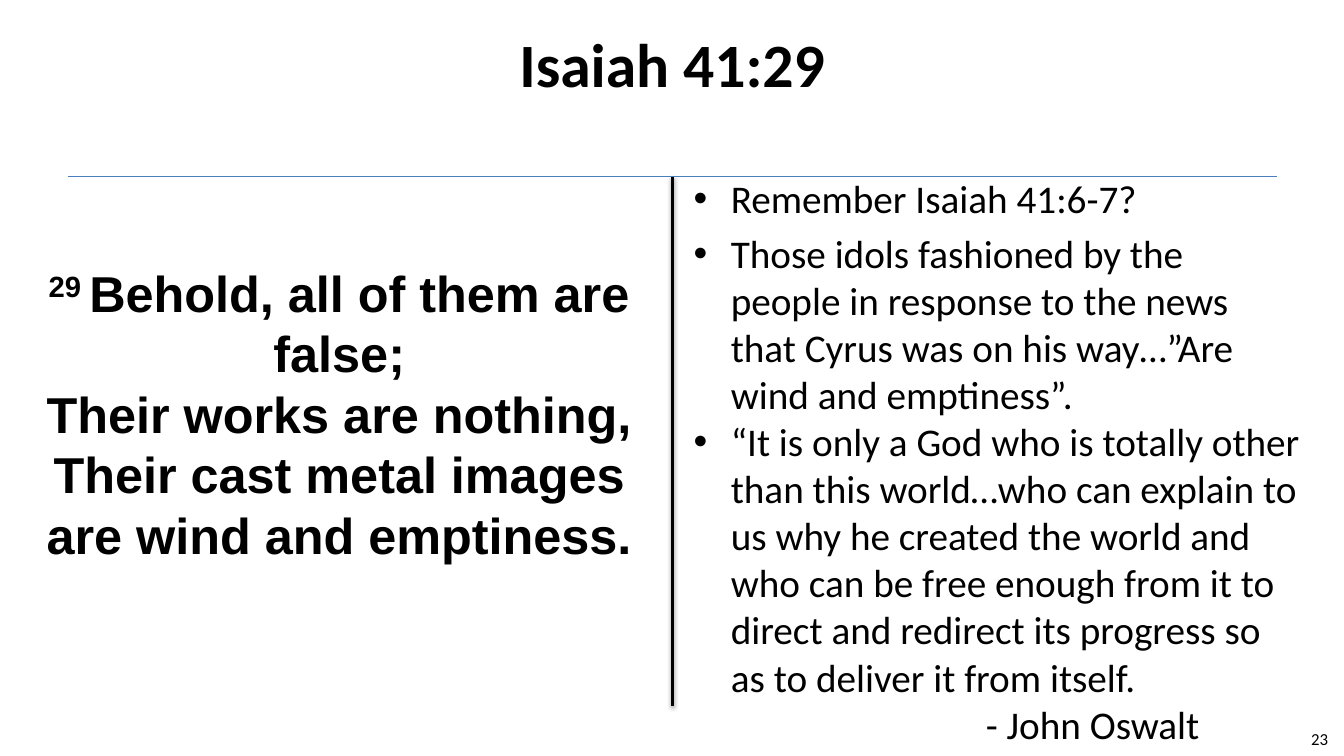
from lxml.etree import SubElement as Sub
from pptx import Presentation as Deck
from pptx.dml.color import RGBColor as Color
from pptx.enum.shapes import MSO_CONNECTOR as Link
from pptx.enum.text import MSO_ANCHOR as Anchor, PP_ALIGN as Align
from pptx.oxml.ns import qn
from pptx.util import Inches, Pt

BLACK = "000000"
POINTS = [
    ("Remember Isaiah 41:6-7?", 0),
    ("Those idols fashioned by the people in response to the news that "
     "Cyrus was on his way…”Are wind and emptiness”.", 5.6),
    ("“It is only a God who is totally other than this world…who can "
     "explain to us why he created the world and who can be free enough "
     "from it to direct and redirect its progress so as to deliver it "
     "from itself.", 0),
]
VERSE = ("Behold, all of them are false;\vTheir works are nothing,\v"
         "Their cast metal images are wind and emptiness.")


def paint(color, code):
    """Set a colour from a hex string."""
    color.rgb = Color.from_string(code)


def style(par, size, bold=False, face="Calibri", align=Align.LEFT):
    """Set the font and alignment of a paragraph."""
    par.alignment = align
    font = par.font
    font.name, font.size, font.bold = face, Pt(size), bold
    paint(font.color, BLACK)


def add_box(slide, left, top, width, height, anchor=Anchor.TOP):
    """Add a wrapping text box and return its frame."""
    box = slide.shapes.add_textbox(*map(Inches, (left, top, width, height)))
    frame = box.text_frame
    frame.word_wrap = True
    frame.vertical_anchor = anchor
    return frame


def add_label(slide, place, text, size, bold, align):
    """Add one centred-height line of text."""
    par = add_box(slide, *place, Anchor.MIDDLE).paragraphs[0]
    par.text = text
    style(par, size, bold, align=align)


def indent(par, left, hang=0, mark=None):
    """Indent a paragraph and give it a bullet if one is named."""
    props = par._p.get_or_add_pPr()
    props.set("marL", str(Inches(left)))
    props.set("indent", str(-Inches(hang)))
    if mark:
        Sub(props, qn("a:buFont"), typeface="Arial")
        Sub(props, qn("a:buChar"), char=mark)


def add_notes(slide):
    """Add the bullet points and the name of their author."""
    frame = add_box(slide, 6.78, 1.68, 6.22, 4.95)
    par = frame.paragraphs[0]
    for text, space in POINTS:
        par.text = text
        indent(par, 0.37, 0.37, "•")
        par.space_before = Pt(space)
        style(par, 28)
        par = frame.add_paragraph()
    par.text = "- John Oswalt"
    indent(par, 2.9)
    style(par, 28)


def add_verse(slide):
    """Add the verse with its raised number."""
    par = add_box(slide, 0.17, 2.55, 6.39, 4.95).paragraphs[0]
    par.text = VERSE
    style(par, 36, True, "Arial", Align.CENTER)
    num = par.add_run()
    num.text = "29 "
    num.font._element.set("baseline", "30000")
    par._p.insert(1, num._r)


def add_rule(slide, start, end, code, width):
    """Add a straight line and return its empty effect list."""
    rule = slide.shapes.add_connector(
        Link.STRAIGHT, *map(Inches, (*start, *end)))
    paint(rule.line.color, code)
    rule.line.width = Pt(width)
    return Sub(rule._element.spPr, qn("a:effectLst"))


def add_shade(effects):
    """Add a soft shadow that falls straight down."""
    shade = Sub(effects, qn("a:outerShdw"), blurRad=str(Pt(3.1)),
                dist=str(Pt(1.6)), dir="5400000", rotWithShape="0")
    tone = Sub(shade, qn("a:srgbClr"), val=BLACK)
    Sub(tone, qn("a:alpha"), val="38000")


def main():
    """Build the slide and save it."""
    deck = Deck()
    deck.slide_width, deck.slide_height = Inches(13.33), Inches(7.5)
    slide = deck.slides.add_slide(deck.slide_layouts[6])
    add_label(slide, (0.67, 0, 12, 1.25), "Isaiah 41:29", 44, True,
              Align.CENTER)
    add_notes(slide)
    add_label(slide, (12.27, 7.13, 1, 0.4), "23", 12, False, Align.RIGHT)
    add_shade(add_rule(slide, (6.67, 1.75), (6.67, 7), BLACK, 2))
    add_rule(slide, (0.67, 1.75), (12.67, 1.75), "4B7EBC", 0.75)
    add_verse(slide)
    deck.save("out.pptx")


if __name__ == "__main__":
    main()
